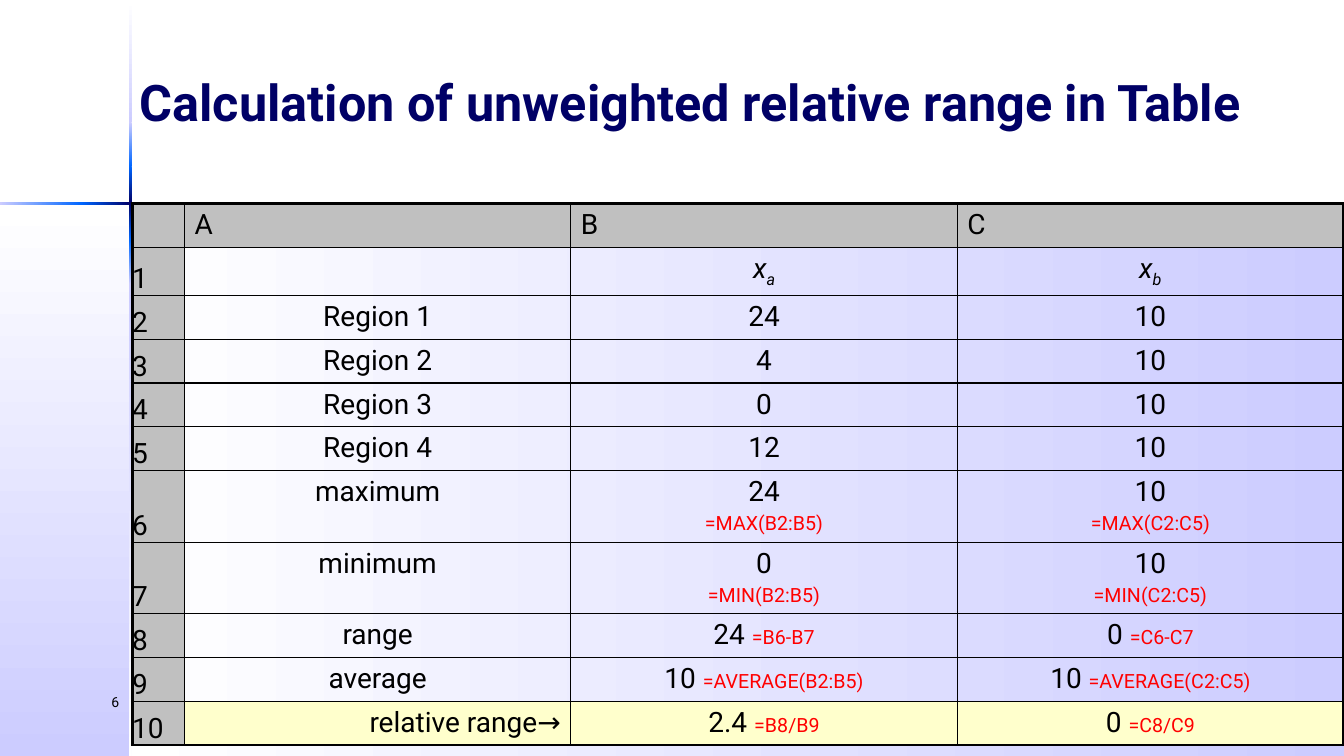
"""Build a slide that shows the unweighted relative range as a spreadsheet."""
from copy import deepcopy
from dataclasses import dataclass

from lxml.etree import SubElement
from pptx import Presentation
from pptx.dml.color import RGBColor
from pptx.enum.shapes import MSO_SHAPE
from pptx.enum.text import MSO_ANCHOR, PP_ALIGN
from pptx.oxml.ns import qn
from pptx.util import Pt

FONT = "Roboto"
WHITE, LILAC, BLUE, NAVY = "FFFFFF", "CCCCFF", "0066FF", "000066"
BLACK, RED, GRAY, CREAM = "000000", "FF0000", "C0C0C0", "FFFFCC"
SLIDE_WIDTH, SLIDE_HEIGHT = 960, 540
CROSS_X, CROSS_Y, BAR = 92.9, 145.4, 1.8
COLUMN_WIDTHS = (37.4, 276, 276, 276)
HEADER_HEIGHT, ROW_HEIGHT, SUBSCRIPT_HEIGHT, TALL_HEIGHT = 31.2, 31.2, 32.8, 51.2
THIN, THICK = 1, 2.25


@dataclass(frozen=True)
class Band:
    left: float
    top: float
    width: float
    height: float
    colors: tuple[str, ...]
    vertical: bool = False


@dataclass(frozen=True)
class SheetRow:
    label: str
    values: tuple[str, str]
    formula: str = ""
    stacked: bool = False
    subscripts: tuple[str, str] = ("", "")


@dataclass(frozen=True)
class Segment:
    start: float
    end: float
    colors: tuple[str, ...]


PANELS = (
    Band(CROSS_X, CROSS_Y, SLIDE_WIDTH - CROSS_X, SLIDE_HEIGHT - CROSS_Y, (WHITE, LILAC)),
    Band(0, CROSS_Y, CROSS_X, SLIDE_HEIGHT - CROSS_Y, (WHITE, LILAC), True),
)
VERTICAL_BAR = (
    Segment(0.5, 87.3, (WHITE, LILAC)),
    Segment(87.3, 118.8, (LILAC, BLUE)),
    Segment(118.8, 171.4, (BLUE, NAVY, BLUE)),
    Segment(171.4, 203, (BLUE, LILAC)),
    Segment(203, SLIDE_HEIGHT, (LILAC, WHITE)),
)
HORIZONTAL_BAR = (
    Segment(0, 58.3, (LILAC, BLUE)),
    Segment(58.3, 128.2, (BLUE, NAVY, BLUE)),
    Segment(128.2, 170, (BLUE, LILAC)),
    Segment(170, SLIDE_WIDTH, (LILAC, WHITE)),
)
SHEET_ROWS = (
    SheetRow("", ("x", "x"), subscripts=("a", "b")),
    SheetRow("Region 1", ("24", "10")),
    SheetRow("Region 2", ("4", "10")),
    SheetRow("Region 3", ("0", "10")),
    SheetRow("Region 4", ("12", "10")),
    SheetRow("maximum", ("24", "10"), "=MAX({0}2:{0}5)", True),
    SheetRow("minimum", ("0", "10"), "=MIN({0}2:{0}5)", True),
    SheetRow("range", ("24", "0"), "={0}6-{0}7"),
    SheetRow("average", ("10", "10"), "=AVERAGE({0}2:{0}5)"),
    SheetRow("relative range→", ("2.4", "0"), "={0}8/{0}9"),
)


def rgb(color: str) -> RGBColor:
    return RGBColor.from_string(color)


def write(para, text: str, size: float = 20, color: str = BLACK, bold: bool = False,
          italic: bool = False, align=PP_ALIGN.LEFT, baseline: int = 0) -> None:
    para.alignment = align
    span = para.add_run()
    span.text = text
    span.font.name, span.font.size = FONT, Pt(size)
    span.font.bold, span.font.italic = bold, italic
    span.font.color.rgb = rgb(color)
    if baseline:
        span.font._element.set("baseline", str(baseline * 1000))


def add_band(page, band: Band) -> None:
    shape = page.shapes.add_shape(MSO_SHAPE.RECTANGLE, Pt(band.left), Pt(band.top),
                                  Pt(band.width), Pt(band.height))
    shape.shadow.inherit = False
    shape.line.fill.background()
    shape.fill.gradient()
    shape.fill.gradient_angle = 270 if band.vertical else 0
    stops = next(shape.element.iter(qn("a:gsLst")))
    for _ in band.colors[2:]:
        stops.append(deepcopy(stops[-1]))
    last = len(band.colors) - 1
    for index, (stop, color) in enumerate(zip(shape.fill.gradient_stops, band.colors)):
        stop.color.rgb = rgb(color)
        stop.position = index / last


def add_text(page, text: str, left: float, top: float, width: float, height: float,
             anchor=MSO_ANCHOR.TOP, **text_format) -> None:
    box = page.shapes.add_textbox(Pt(left), Pt(top), Pt(width), Pt(height))
    box.text_frame.word_wrap = True
    box.text_frame.vertical_anchor = anchor
    write(box.text_frame.paragraphs[0], text, **text_format)


def style_cell(cell, fill: str, borders: dict[str, float]) -> None:
    if fill:
        cell.fill.solid()
        cell.fill.fore_color.rgb = rgb(fill)
    else:
        cell.fill.background()
    properties = cell._tc.get_or_add_tcPr()
    for index, (side, width) in enumerate(borders.items()):
        line = SubElement(properties, qn(f"a:ln{side}"), w=str(Pt(width)))
        paint = SubElement(line, qn("a:solidFill"))
        SubElement(paint, qn("a:srgbClr"), val=BLACK)
        properties.insert(index, line)


def write_row_number(cell, number: int) -> None:
    cell.margin_left = cell.margin_right = cell.margin_top = cell.margin_bottom = 0
    cell.vertical_anchor = MSO_ANCHOR.BOTTOM
    write(cell.text_frame.paragraphs[0], str(number))


def write_value(cell, row: SheetRow, index: int) -> None:
    para = cell.text_frame.paragraphs[0]
    subscript = row.subscripts[index]
    inline = row.formula and not row.stacked
    write(para, row.values[index] + (" " if inline else ""),
          italic=bool(subscript), align=PP_ALIGN.CENTER)
    if subscript:
        write(para, subscript, italic=True, align=PP_ALIGN.CENTER, baseline=-25)
    if row.formula:
        if row.stacked:
            para = cell.text_frame.add_paragraph()
            para.space_before = Pt(2.8)
        write(para, row.formula.format("BC"[index]), size=14, color=RED,
              align=PP_ALIGN.CENTER)


def row_height(row: SheetRow) -> float:
    if row.stacked:
        return TALL_HEIGHT
    return SUBSCRIPT_HEIGHT if any(row.subscripts) else ROW_HEIGHT


def add_sheet(page) -> None:
    heights = [HEADER_HEIGHT, *map(row_height, SHEET_ROWS)]
    last_row, last_column = len(heights) - 1, len(COLUMN_WIDTHS) - 1
    table = page.shapes.add_table(len(heights), len(COLUMN_WIDTHS), Pt(94.4), Pt(CROSS_Y),
                                  Pt(sum(COLUMN_WIDTHS)), Pt(sum(heights))).table
    table.first_row = table.horz_banding = False
    for column, width in zip(table.columns, COLUMN_WIDTHS):
        column.width = Pt(width)
    for line, height in zip(table.rows, heights):
        line.height = Pt(height)
    for y in range(last_row + 1):
        for x in range(last_column + 1):
            fill = GRAY if x == 0 or y == 0 else CREAM if y == last_row else ""
            edges = {"L": x == 0, "R": x == last_column, "T": y == 0, "B": y == last_row}
            style_cell(table.cell(y, x), fill,
                       {side: THICK if outer else THIN for side, outer in edges.items()})
    for x, letter in enumerate("ABC", start=1):
        table.cell(0, x).vertical_anchor = MSO_ANCHOR.MIDDLE
        write(table.cell(0, x).text_frame.paragraphs[0], letter)
    for y, row in enumerate(SHEET_ROWS, start=1):
        write_row_number(table.cell(y, 0), y)
        if row.label:
            write(table.cell(y, 1).text_frame.paragraphs[0], row.label,
                  align=PP_ALIGN.RIGHT if y == last_row else PP_ALIGN.CENTER)
        for index in range(len(row.values)):
            write_value(table.cell(y, index + 2), row, index)


def main() -> None:
    deck = Presentation()
    deck.slide_width, deck.slide_height = Pt(SLIDE_WIDTH), Pt(SLIDE_HEIGHT)
    page = deck.slides.add_slide(deck.slide_layouts[6])
    for panel in PANELS:
        add_band(page, panel)
    for part in HORIZONTAL_BAR:
        add_band(page, Band(part.start, 144.5, part.end - part.start, BAR, part.colors))
    for part in VERTICAL_BAR:
        add_band(page, Band(92.2, part.start, BAR, part.end - part.start, part.colors, True))
    add_text(page, "6", 0, 491.8, 92.2, 36, size=10, align=PP_ALIGN.RIGHT)
    add_text(page, "Calculation of unweighted relative range in Table", 92.6, 0, 867.4, CROSS_Y,
             anchor=MSO_ANCHOR.MIDDLE, size=36, color=NAVY, bold=True)
    add_sheet(page)
    deck.save("out.pptx")


if __name__ == "__main__":
    main()
